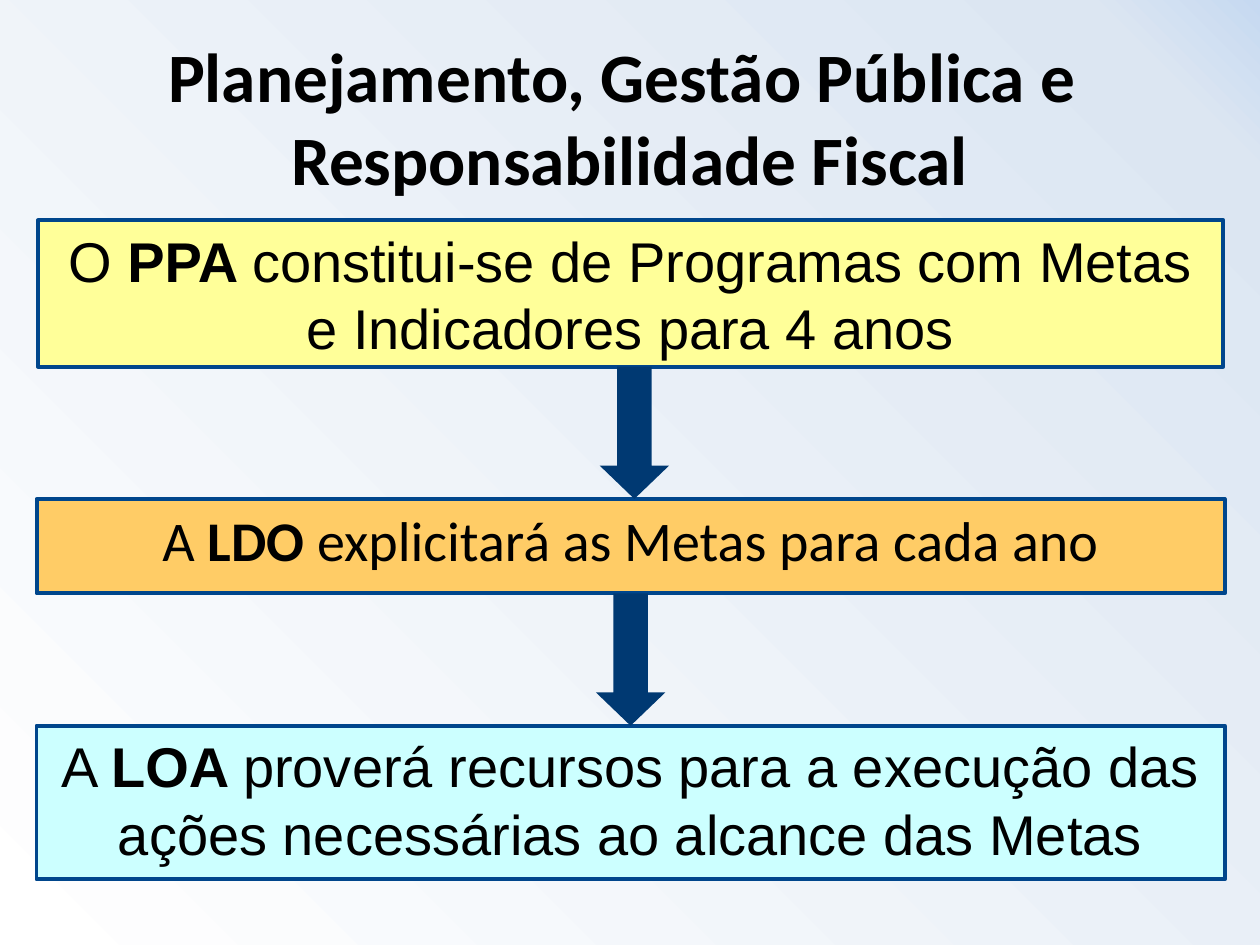
from copy import deepcopy

from lxml import etree
from pptx import Presentation
from pptx.dml.color import RGBColor
from pptx.enum.shapes import MSO_SHAPE
from pptx.enum.text import MSO_ANCHOR, MSO_AUTO_SIZE, PP_ALIGN
from pptx.oxml.ns import qn
from pptx.util import Inches, Pt

RECTANGLE, DOWN_ARROW = MSO_SHAPE.RECTANGLE, MSO_SHAPE.DOWN_ARROW
CENTER, TOP, MIDDLE = PP_ALIGN.CENTER, MSO_ANCHOR.TOP, MSO_ANCHOR.MIDDLE
NO_AUTOFIT = MSO_AUTO_SIZE.NONE


class Theme:
    text = RGBColor.from_string("000000")
    border = RGBColor.from_string("00468C")
    arrow = RGBColor.from_string("003972")
    yellow = RGBColor.from_string("FFFF99")
    orange = RGBColor.from_string("FFCC66")
    cyan = RGBColor.from_string("CCFFFF")
    gradient = [(0, "FFFFFF"), (0.92, "DCE6F2"), (1, "C6D9F1")]
    heading_font, box_font = "Calibri", "Arial"
    title_size, box_size = Pt(39.6), Pt(32)
    border_width = Pt(2.25)


def place(shape, left, top, width, height):
    shape.left, shape.top = Inches(left), Inches(top)
    shape.width, shape.height = Inches(width), Inches(height)


def format_paragraph(paragraph, font_name, size):
    paragraph.alignment = CENTER
    paragraph.space_before = Pt(0)
    paragraph.font.name = font_name
    paragraph.font.size = size
    paragraph.font.color.rgb = Theme.text


presentation = Presentation()
presentation.slide_width, presentation.slide_height = Inches(10), Inches(7.5)
slide = presentation.slides.add_slide(presentation.slide_layouts[1])

# Gradient backdrop, behind the placeholders
backdrop = slide.shapes.add_shape(RECTANGLE, 0, 0, Inches(10), Inches(7.5))
backdrop.shadow.inherit = False
backdrop.line.fill.background()
backdrop.fill.gradient()
backdrop.fill.gradient_angle = 45
stop_list = backdrop._element.spPr.find(".//" + qn("a:gsLst"))
stop_list.append(deepcopy(stop_list[-1]))
for stop, (position, color) in zip(backdrop.fill.gradient_stops, Theme.gradient):
    stop.position = position
    stop.color.rgb = RGBColor.from_string(color)
slide.shapes._spTree.insert(2, backdrop._element)

# Title
title = slide.shapes.title
place(title, 0.5, 0.3, 9, 1.25)
title.text_frame.text = "Planejamento, Gestão Pública e \vResponsabilidade Fiscal"
title.text_frame.vertical_anchor = MIDDLE
title.text_frame.auto_size = NO_AUTOFIT
format_paragraph(title.text_frame.paragraphs[0], Theme.heading_font, Theme.title_size)
title.text_frame.paragraphs[0].font.bold = True

# Budget steps: the middle one is the body placeholder
body = slide.placeholders[1]
ppa_box = slide.shapes.add_shape(RECTANGLE, 0, 0, 0, 0)
loa_box = slide.shapes.add_shape(RECTANGLE, 0, 0, 0, 0)
steps = [
    (ppa_box, (0.3, 1.75, 9.41, 1.16), Theme.yellow, Theme.box_font,
     ("O ", "PPA ", "constitui-se de Programas com Metas e Indicadores para 4 anos")),
    (body, (0.29, 3.96, 9.43, 0.75), Theme.orange, Theme.heading_font,
     ("A ", "LDO", " explicitará as Metas para cada ano")),
    (loa_box, (0.29, 5.76, 9.43, 1.22), Theme.cyan, Theme.box_font,
     ("A ", "LOA ", "proverá recursos para a execução das ações necessárias ao alcance das Metas")),
]
for shape, bounds, color, font_name, (article, acronym, rest) in steps:
    place(shape, *bounds)
    shape.shadow.inherit = False
    shape.fill.solid()
    shape.fill.fore_color.rgb = color
    shape.line.color.rgb = Theme.border
    shape.line.width = Theme.border_width
    frame = shape.text_frame
    frame.word_wrap = True
    frame.auto_size = NO_AUTOFIT
    frame.vertical_anchor = TOP
    paragraph = frame.paragraphs[0]
    if shape is body:
        properties = paragraph._p.get_or_add_pPr()
        properties.set("marL", "0")
        properties.set("indent", "0")
        etree.SubElement(properties, qn("a:buNone"))
    format_paragraph(paragraph, font_name, Theme.box_size)
    for text in (article, acronym, rest):
        run = paragraph.add_run()
        run.text = text
        if text == acronym:
            run.font.bold = True

# Arrows fill the gaps between consecutive boxes
for left, (upper, *_), (lower, *_) in zip((4.76, 4.73), steps, steps[1:]):
    bottom = upper.top + upper.height
    arrow = slide.shapes.add_shape(
        DOWN_ARROW, Inches(left), bottom, Inches(0.55), lower.top - bottom)
    arrow.adjustments[1] = 0.48
    arrow.shadow.inherit = False
    arrow.fill.solid()
    arrow.fill.fore_color.rgb = Theme.arrow
    arrow.line.fill.background()

presentation.save("out.pptx")
